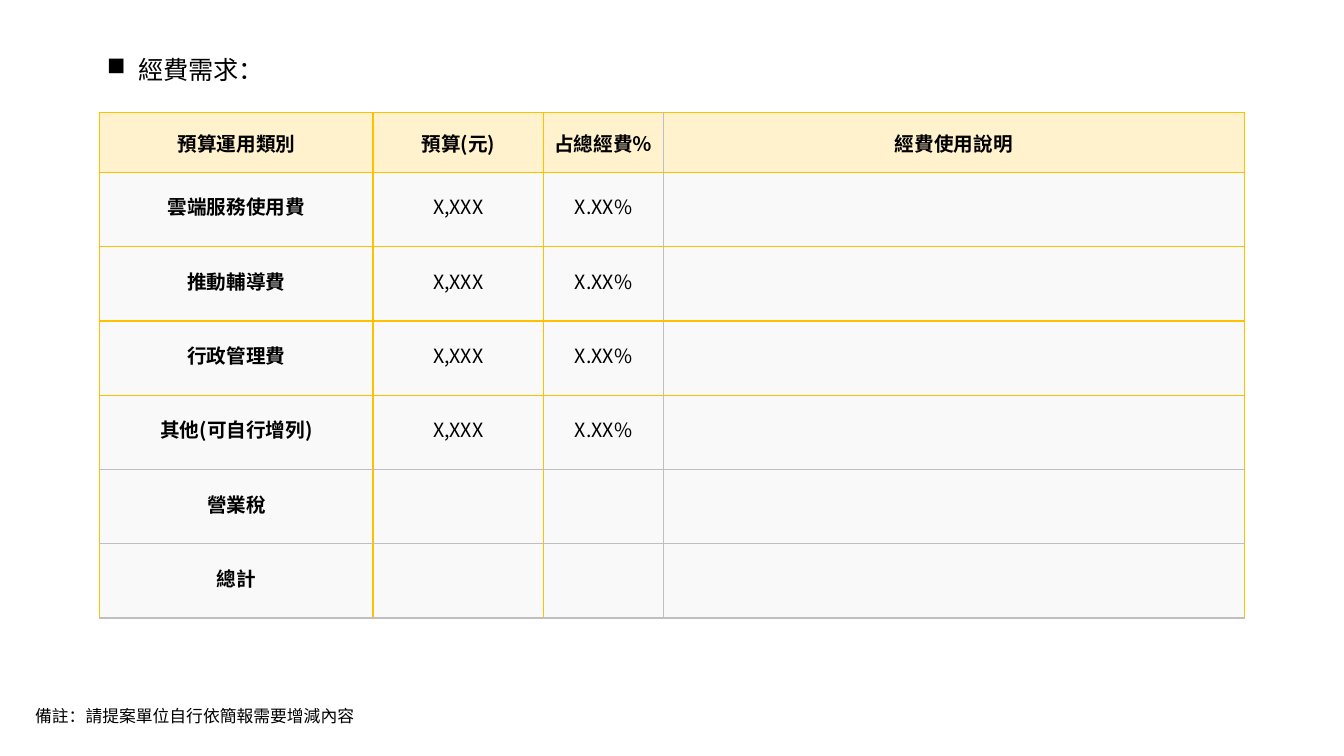
from lxml.etree import SubElement
from pptx import Presentation
from pptx.dml.color import RGBColor
from pptx.enum.text import MSO_ANCHOR as Anchor, MSO_AUTO_SIZE as AutoSize, PP_ALIGN as Align
from pptx.oxml.ns import qn
from pptx.util import Inches, Pt


def colour(code):
    return RGBColor.from_string(code)


class BudgetPage:
    heading_font = "Noto Sans CJK TC"
    body_font = "Noto Sans CJK SC"
    ink = "000000"
    header_fill = "FFF2CC"
    body_fill = "F9F9F9"
    gold = "FFC000"
    grey = "BFBFBF"

    def __init__(self, deck):
        self.deck = deck
        self.page = deck.slides.add_slide(deck.slide_layouts[5])

    def across(self, percent):
        return round(self.deck.slide_width * percent / 100)

    def down(self, percent):
        return round(self.deck.slide_height * percent / 100)

    def area(self, left, top, width, height):
        return self.across(left), self.down(top), self.across(width), self.down(height)

    def style(self, para, size, font, bold=False):
        for span in para.runs:
            span.font.size = Pt(size)
            span.font.bold = bold
            span.font.color.rgb = colour(self.ink)
            span.font.name = font
            SubElement(span.font._element, qn("a:ea"), typeface=font)

    def title(self, text, *place):
        box = self.page.shapes.title
        box.left, box.top, box.width, box.height = self.area(*place)
        frame = box.text_frame
        frame.text = text
        frame.word_wrap = True
        frame.auto_size = AutoSize.NONE
        frame.vertical_anchor = Anchor.TOP
        para = frame.paragraphs[0]
        para.alignment = Align.LEFT
        para.line_spacing = 1.5
        para.space_before = Pt(5)
        settings = para._p.get_or_add_pPr()
        settings.set("marL", str(Inches(0.81)))
        settings.set("indent", str(Inches(-0.31)))
        SubElement(settings, qn("a:buChar"), char="■")
        self.style(para, 18, self.heading_font)

    def note(self, text, *place):
        frame = self.page.shapes.add_textbox(*self.area(*place)).text_frame
        frame.text = text
        frame.word_wrap = True
        frame.auto_size = AutoSize.SHAPE_TO_FIT_TEXT
        self.style(frame.paragraphs[0], 12, self.body_font)

    def border(self, cell, **sides):
        settings = cell._tc.get_or_add_tcPr()
        for side, code in sides.items():
            line = SubElement(settings, qn(f"a:ln{side}"), w=str(Pt(1)))
            fill = SubElement(line, qn("a:solidFill"))
            SubElement(fill, qn("a:srgbClr"), val=code)

    def cell(self, cell, text, header, bold):
        cell.fill.solid()
        cell.fill.fore_color.rgb = colour(self.header_fill if header else self.body_fill)
        cell.vertical_anchor = Anchor.MIDDLE
        cell.margin_left = cell.margin_right = Inches(0.05)
        cell.margin_top = cell.margin_bottom = Inches(0.05)
        cell.text = text
        para = cell.text_frame.paragraphs[0]
        para.alignment = Align.CENTER
        if text and not header:
            para.line_spacing = Pt(16)
            para.space_before = para.space_after = Pt(9)
        self.style(para, 14, self.body_font, bold)

    def table(self, rows, left, top, widths, heights, grey_rows, grey_columns):
        place = self.area(left, top, sum(widths), sum(heights))
        table = self.page.shapes.add_table(len(rows), len(widths), *place).table
        for column, width in zip(table.columns, widths):
            column.width = self.across(width)
        for row, height in zip(table.rows, heights):
            row.height = self.down(height)
        across_lines = [self.grey if n in grey_rows else self.gold for n in range(len(rows) + 1)]
        down_lines = [self.grey if n in grey_columns else self.gold for n in range(len(widths) + 1)]
        for r, texts in enumerate(rows):
            for c, text in enumerate(texts):
                cell = table.cell(r, c)
                self.border(cell, L=down_lines[c], R=down_lines[c + 1],
                            T=across_lines[r], B=across_lines[r + 1])
                self.cell(cell, text, header=r == 0, bold=r == 0 or c == 0)


def main():
    deck = Presentation()
    deck.slide_width, deck.slide_height = Inches(13.33), Inches(7.5)
    budget = BudgetPage(deck)
    budget.title("經費需求：", 3.45, 4.53, 93.1, 87.47)
    costs = ["雲端服務使用費", "推動輔導費", "行政管理費", "其他(可自行增列)"]
    totals = ["營業稅", "總計"]
    rows = [["預算運用類別", "預算(元)", "占總經費％", "經費使用說明"]]
    rows += [[name, "X,XXX", "X.XX%", ""] for name in costs]
    rows += [[name, "", "", ""] for name in totals]
    heights = [7.87] + [9.83] * (len(rows) - 1)
    budget.table(rows, 7.43, 14.93, [20.33, 12.68, 8.93, 43.21], heights,
                 grey_rows={5, 6, 7}, grey_columns={3})
    budget.note("備註：請提案單位自行依簡報需要增減內容", 1.88, 92.67, 25.96, 4.13)
    deck.save("out.pptx")


if __name__ == "__main__":
    main()
